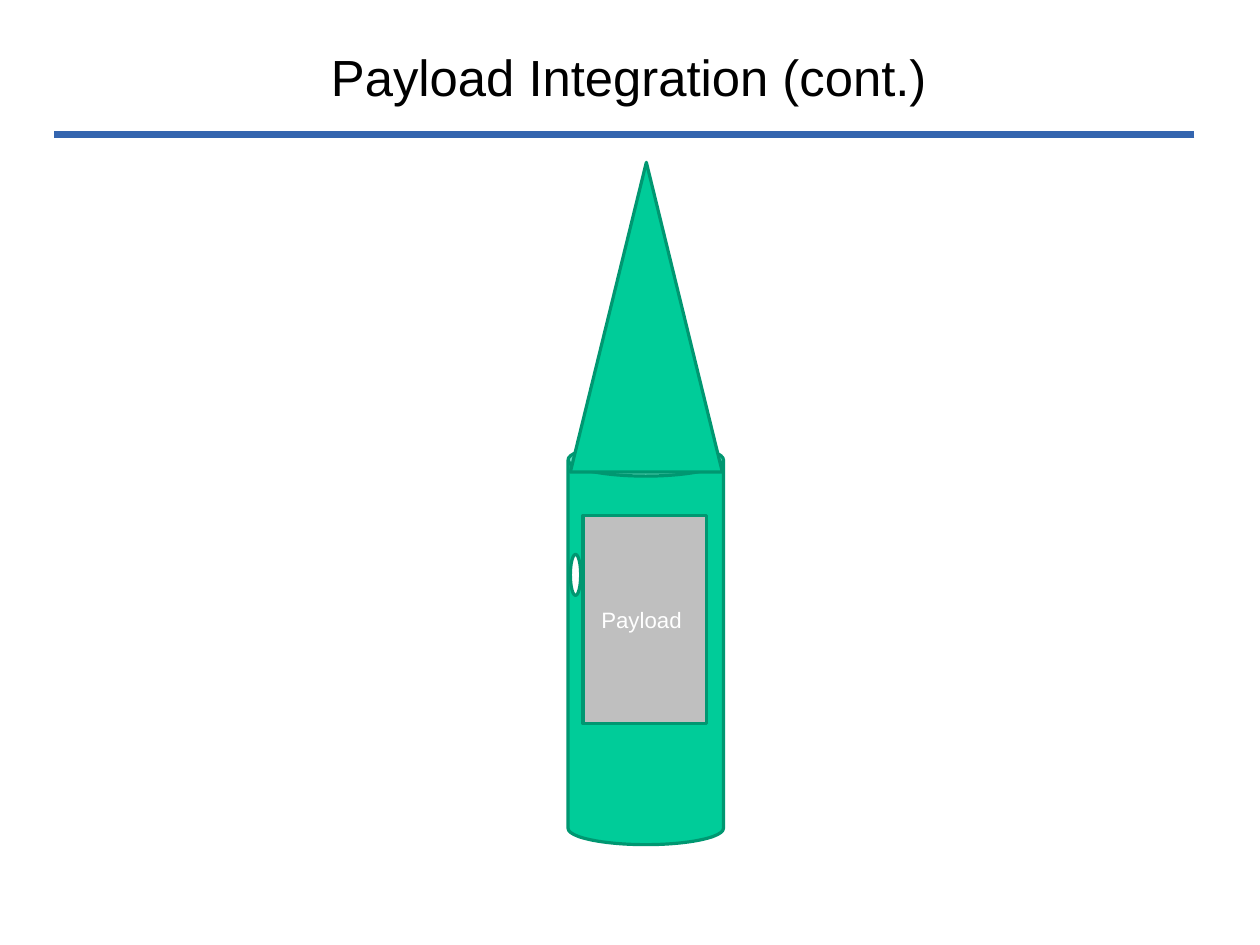
from dataclasses import dataclass

from lxml import etree
from pptx import Presentation
from pptx.dml.color import RGBColor
from pptx.enum import shapes, text
from pptx.oxml.ns import qn
from pptx.util import Inches, Pt


@dataclass(frozen=True)
class Theme:
    font: str = "Arial"
    title: int = 32
    label: int = 14
    edge: float = 2
    rule: float = 4.31
    black: str = "000000"
    white: str = "FFFFFF"
    blue: str = "3465AF"
    green: str = "00CC99"
    dark: str = "009771"
    gray: str = "BFBFBF"


THEME = Theme()
KIND = shapes.MSO_SHAPE
CM = 1 / 2.54  # inches in a centimetre


def rgb(code):
    return RGBColor.from_string(code)


def write(frame, words, size, color):
    """Put one centred line in the middle of a text frame."""
    frame.text = words
    frame.word_wrap = True
    frame.vertical_anchor = text.MSO_ANCHOR.MIDDLE
    line = frame.paragraphs[0]
    line.alignment = text.PP_ALIGN.CENTER
    font = line.runs[0].font
    font.name, font.size, font.color.rgb = THEME.font, Pt(size), rgb(color)


def draw(slide, kind, box, fill):
    """Add a filled shape with the dark green edge."""
    shape = slide.shapes.add_shape(kind, *map(Inches, box))
    shape.shadow.inherit = False
    shape.fill.solid()
    shape.fill.fore_color.rgb = rgb(fill)
    shape.line.color.rgb = rgb(THEME.dark)
    shape.line.width = Pt(THEME.edge)
    return shape


def header(slide, box, words):
    """Place the title in the box and a wide rule below it."""
    left, top, width, height = box
    rule_y = Inches(top + height + 0.13)
    rule = slide.shapes.add_connector(
        shapes.MSO_CONNECTOR.STRAIGHT,
        Inches(left + width - 0.01), rule_y, Inches(left - 0.08), rule_y)
    rule.line.color.rgb = rgb(THEME.blue)
    rule.line.width = Pt(THEME.rule)
    etree.SubElement(rule.element.spPr, qn("a:effectLst"))

    frame = slide.shapes.add_textbox(*map(Inches, box)).text_frame
    frame.margin_left = frame.margin_right = Inches(0.1)
    frame.margin_top = frame.margin_bottom = Inches(0.1)
    write(frame, words, THEME.title, THEME.black)
    frame.paragraphs[0].line_spacing = 0.94


def rocket(slide, box):
    """Draw body, payload bay, port and nose cone inside the box."""
    left, top, width, height = box
    body_h = 3.51
    body_y = top + height - body_h
    body = draw(slide, KIND.CAN, (left, body_y, width, body_h), THEME.green)
    body.adjustments[0] = 0.21

    bay = draw(slide, KIND.RECTANGLE,
               (left + 0.13, body_y + 0.63, 1.08, 1.82), THEME.gray)
    write(bay.text_frame, "Payload ", THEME.label, THEME.white)

    draw(slide, KIND.OVAL,
         (left + 0.02, body_y + 0.97, 0.09, 0.36), THEME.white)
    draw(slide, KIND.ISOSCELES_TRIANGLE,
         (left + 0.02, top, width - 0.03, 2.71), THEME.green)


def main():
    deck = Presentation()
    deck.slide_width, deck.slide_height = Inches(28 * CM), Inches(21 * CM)
    slide = deck.slides.add_slide(deck.slide_layouts[6])
    header(slide, (0.55, 0.33, 9.91, 0.72), "Payload Integration (cont.)")
    rocket(slide, (4.97, 1.42, 1.36, 5.97))
    deck.save("out.pptx")


if __name__ == "__main__":
    main()
